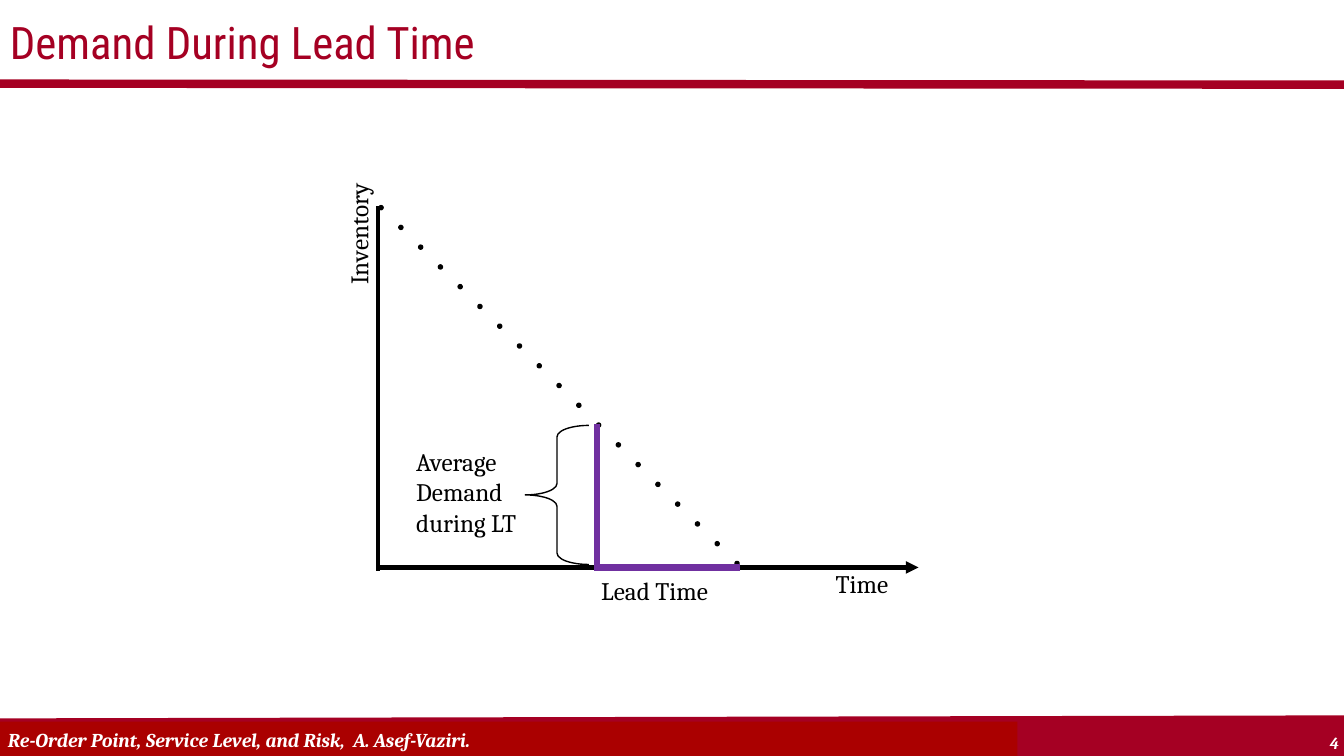
from lxml.etree import SubElement
from pptx import Presentation
from pptx.dml.color import RGBColor
from pptx.enum.shapes import MSO_CONNECTOR, MSO_SHAPE
from pptx.enum.text import MSO_ANCHOR, PP_ALIGN
from pptx.oxml.ns import qn
from pptx.util import Pt

PX = 9144  # EMU per px, 100 px to the inch
COLORS = {"crimson": "A50023", "red": "AA0000", "black": "000000",
          "purple": "7030A0", "white": "FFFFFF"}
BODY, HEAD = "Cambria", "Roboto Condensed"

# start x, start y, end x, end y, color, points, arrow
BANDS = [(0, 83, 1333, 84, "crimson", 6, False),
         (-1, 733, 1336, 730, "crimson", 29.25, False)]
AXES = [(375, 563, 911, 563, "black", 3, True),
        (375, 566, 375, 204, "black", 3, False)]
LEAD = [(734, 563, 592, 563, "purple", 4.5, False),
        (592, 421, 592, 566, "purple", 4.5, False)]

# text, box (left, top, width, height), wrap, rotation
LABELS = [("Time", (819, 559, 77, 40), False, 0),
          ("Inventory", (290, 207, 131, 40), False, 270),
          ("Average Demand during LT", (403, 438, 150, 101), True, 0),
          (" Lead Time", (581, 566, 181, 40), True, 0)]
TITLE = ("Demand During Lead Time", (0, 0, 1340, 82))
FOOTER = ("Re-Order Point, Service Level, and Risk,  A. Asef-Vaziri.",
          (-2, 716, 1011, 34))
PAGE = ("4", (1238, 722, 100, 30))

# The demand line: dots spaced evenly from first to last
DOTS, FIRST, LAST, DOT = 19, (376, 204), (729, 557), 4
BRACE = (521, 422, 63, 138)


def emu(*values):
    return [round(v * PX) for v in values]


def color(name):
    return RGBColor.from_string(COLORS[name])


def draw_lines(shapes, lines):
    for *ends, ink, width, arrow in lines:
        line = shapes.add_connector(MSO_CONNECTOR.STRAIGHT, *emu(*ends))
        line.line.color.rgb = color(ink)
        line.line.width = Pt(width)
        props = line._element.spPr
        if arrow:
            SubElement(props.find(qn("a:ln")), qn("a:tailEnd"), type="triangle")
        SubElement(props, qn("a:effectLst"))


def add_shape(shapes, kind, box, fill=None, line=None):
    shape = shapes.add_shape(kind, *emu(*box))
    shape.shadow.inherit = False
    if fill:
        shape.fill.solid()
        shape.fill.fore_color.rgb = color(fill)
    else:
        shape.fill.background()
    if line:
        shape.line.color.rgb = color(line)
        shape.line.width = Pt(1)
    else:
        shape.line.fill.background()
    return shape


def write(shape, text, size, ink="black", face=BODY, strong=False, wrap=True,
          anchor=MSO_ANCHOR.TOP, align=PP_ALIGN.LEFT):
    frame = shape.text_frame
    frame.word_wrap = wrap
    frame.vertical_anchor = anchor
    par = frame.paragraphs[0]
    par.text = text
    par.alignment = align
    font = par.font
    font.name, font.size = face, Pt(size)
    font.bold = font.italic = strong
    font.color.rgb = color(ink)


def main():
    deck = Presentation()
    deck.slide_width, deck.slide_height = emu(1333, 750)
    shapes = deck.slides.add_slide(deck.slide_layouts[6]).shapes

    draw_lines(shapes, BANDS)
    text, box = PAGE
    write(shapes.add_textbox(*emu(*box)), text, 12, "white", strong=True,
          align=PP_ALIGN.RIGHT)
    text, box = FOOTER
    write(add_shape(shapes, MSO_SHAPE.RECTANGLE, box, "red"), text, 14,
          "white", strong=True, anchor=MSO_ANCHOR.BOTTOM)

    draw_lines(shapes, AXES)
    for i in range(DOTS):
        left, top = (a + (b - a) * i / (DOTS - 1) for a, b in zip(FIRST, LAST))
        add_shape(shapes, MSO_SHAPE.OVAL, (left, top, DOT, DOT), "black", "black")
    draw_lines(shapes, LEAD)

    text, box = TITLE
    write(shapes.add_textbox(*emu(*box)), text, 32, "crimson", HEAD,
          anchor=MSO_ANCHOR.MIDDLE)
    brace = add_shape(shapes, MSO_SHAPE.LEFT_BRACE, BRACE, line="black")
    brace.adjustments[0] = 0.18
    for text, box, wrap, turn in LABELS:
        label = shapes.add_textbox(*emu(*box))
        label.rotation = turn
        write(label, text, 18, wrap=wrap)

    deck.save("out.pptx")


if __name__ == "__main__":
    main()
